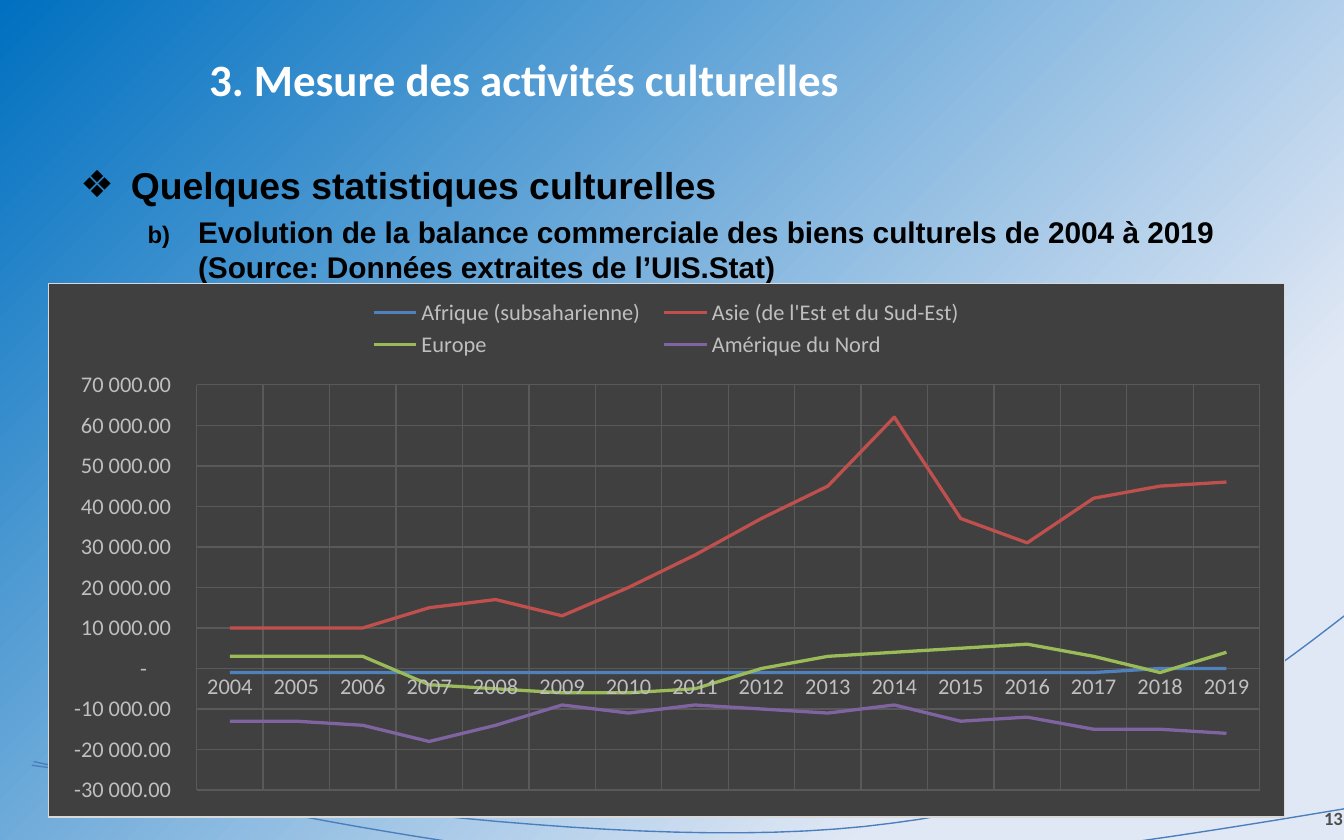
import lxml.etree
import pptx
import pptx.chart.data
import pptx.dml.color
import pptx.enum.chart
import pptx.enum.text
import pptx.oxml
import pptx.oxml.ns
import pptx.util

Pt = pptx.util.Pt
RGB = pptx.dml.color.RGBColor.from_string
qn = pptx.oxml.ns.qn
NS = pptx.oxml.ns.nsdecls("a", "c")
COLORS = {
    "white": "FFFFFF", "black": "000000", "page": "4D4D4D", "curve": "4B7EBC",
    "sky": "E1E8F5", "deep": "0070C0", "panel": "404040", "border": "D9D9D9",
    "grid": "595959", "label": "BFBFBF", "africa": "4F81BD", "asia": "C0504D",
    "europe": "9BBB59", "america": "8064A2",
}

presentation = pptx.Presentation()
presentation.slide_width, presentation.slide_height = Pt(720), Pt(450)
slide = presentation.slides.add_slide(presentation.slide_layouts[6])


def add_text(frame, text, size, color="black", font="Calibri", align="LEFT",
             before=0, left=0, hanging=0, level=0, bullet=()):
    """Write one bold paragraph, in the empty first one when there is one."""
    paragraph = frame.paragraphs[0] if not frame.text else frame.add_paragraph()
    paragraph.alignment = getattr(pptx.enum.text.PP_ALIGN, align)
    paragraph.level = level
    if before:
        paragraph.space_before = Pt(before)
    if bullet:
        properties = paragraph._p.get_or_add_pPr()
        properties.set("marL", str(Pt(left)))
        properties.set("indent", str(Pt(-hanging)))
        for tag, attributes in bullet:
            lxml.etree.SubElement(properties, qn(tag), attributes)
    run = paragraph.add_run()
    run.text = text
    run.font.size, run.font.name, run.font.bold = Pt(size), font, True
    run.font.color.rgb = RGB(COLORS[color])


def set_layout(part, x, y, w, h, inner=False):
    """Place a chart part by fractions of the chart area."""
    for old in part.findall(qn("c:layout")):
        part.remove(old)
    target = '<c:layoutTarget val="inner"/>' if inner else ""
    layout = pptx.oxml.parse_xml(
        f'<c:layout {NS}><c:manualLayout>{target}<c:xMode val="edge"/><c:yMode val="edge"/>'
        f'<c:x val="{x}"/><c:y val="{y}"/><c:w val="{w}"/><c:h val="{h}"/>'
        '</c:manualLayout></c:layout>')
    position = part.find(qn("c:legendPos"))
    part.insert(0 if position is None else part.index(position) + 1, layout)


# Background: glow spreading from the bottom right corner
background = slide.background.fill
background.solid()
background.fore_color.rgb = RGB(COLORS["sky"])
solid = slide.background._cSld.bg.bgPr.find(qn("a:solidFill"))
solid.getparent().replace(solid, pptx.oxml.parse_xml(
    f'<a:gradFill {NS} rotWithShape="1"><a:gsLst>'
    f'<a:gs pos="22000"><a:srgbClr val="{COLORS["sky"]}"><a:alpha val="67000"/></a:srgbClr></a:gs>'
    f'<a:gs pos="100000"><a:srgbClr val="{COLORS["deep"]}"><a:alpha val="87000"/></a:srgbClr></a:gs>'
    '</a:gsLst><a:path path="circle"><a:fillToRect l="100000" t="100000"/></a:path></a:gradFill>'))

# Decorative curves: each is a chain of two cubic arcs
curves = [
    [(17, 410), (188, 433), (359, 457), (478, 441), (598, 426), (668, 371), (738, 316)],
    [(18, 408), (145, 435), (271, 462), (391, 465), (511, 469), (626, 449), (740, 430)],
]
STEPS = 24
for curve in curves:
    points = []
    for start in (0, 3):
        arc = curve[start:start + 4]
        for step in range(STEPS + 1):
            t = step / STEPS
            weights = ((1 - t) ** 3, 3 * t * (1 - t) ** 2, 3 * t * t * (1 - t), t ** 3)
            points.append([Pt(sum(w * p[axis] for w, p in zip(weights, arc))) for axis in (0, 1)])
    builder = slide.shapes.build_freeform(*points[0])
    builder.add_line_segments(points[1:], close=False)
    wave = builder.convert_to_shape()
    wave.shadow.inherit = False
    wave.fill.background()
    wave.line.color.rgb = RGB(COLORS["curve"])
    wave.line.width = Pt(0.75)

# Title, outline and page number
frames = []
for box, anchor in (((105, 12, 615, 60), "MIDDLE"), ((36, 83.5, 648, 348.5), "TOP"),
                    ((655, 426, 71.5, 24), "MIDDLE")):
    frame = slide.shapes.add_textbox(*map(Pt, box)).text_frame
    frame.word_wrap = True
    frame.vertical_anchor = getattr(pptx.enum.text.MSO_ANCHOR, anchor)
    frames.append(frame)
title, outline, page = frames
add_text(title, "3. Mesure des activités culturelles", 24, color="white")
add_text(outline, "Quelques statistiques culturelles", 20, font="Arial", left=27, hanging=27,
         bullet=[("a:buFont", {"typeface": "Arial"}), ("a:buChar", {"char": "❖"})])
add_text(outline, "Evolution de la balance commerciale des biens culturels de 2004 à 2019 "
         "(Source: Données extraites de l’UIS.Stat)", 16, font="Arial", before=3.2,
         left=63, hanging=27, level=1,
         bullet=[("a:buSzPct", {"val": "80000"}), ("a:buFont", {"typeface": "Arial"}),
                 ("a:buAutoNum", {"type": "alphaLcParenR", "startAt": "2"})])
add_text(page, "13", 10, color="page", align="RIGHT")

# Trade balance by region, in thousands
balances = [
    ("Afrique (subsaharienne)", "africa", [-1] * 14 + [0, 0]),
    ("Asie (de l'Est et du Sud-Est)", "asia",
     [10, 10, 10, 15, 17, 13, 20, 28, 37, 45, 62, 37, 31, 42, 45, 46]),
    ("Europe", "europe", [3, 3, 3, -4, -5, -6, -6, -5, 0, 3, 4, 5, 6, 3, -1, 4]),
    ("Amérique du Nord", "america",
     [-13, -13, -14, -18, -14, -9, -11, -9, -10, -11, -9, -13, -12, -15, -15, -16]),
]
data = pptx.chart.data.CategoryChartData()
data.categories = [str(year) for year in range(2004, 2020)]
for region, _, thousands in balances:
    data.add_series(region, [value * 1000 for value in thousands])
chart = slide.shapes.add_chart(pptx.enum.chart.XL_CHART_TYPE.LINE, Pt(25.5), Pt(151.5),
                               Pt(663), Pt(286.5), data).chart
chart.has_title = False
chart.font.size, chart.font.name = Pt(12), "Calibri"
chart.font.color.rgb = RGB(COLORS["label"])
for series, (_, color, _) in zip(chart.plots[0].series, balances):
    series.smooth = False
    series.marker.style = pptx.enum.chart.XL_MARKER_STYLE.NONE
    series.format.line.color.rgb = RGB(COLORS[color])
    series.format.line.width = Pt(1.75)
chart.plots[0].vary_by_categories = False

# Axes
for axis in (chart.category_axis, chart.value_axis):
    axis.major_tick_mark = axis.minor_tick_mark = pptx.enum.chart.XL_TICK_MARK.NONE
    axis.format.line.fill.background()
    axis.has_major_gridlines = True
    axis.major_gridlines.format.line.color.rgb = RGB(COLORS["grid"])
    axis.major_gridlines.format.line.width = Pt(0.75)
    axis.tick_labels.font.size, axis.tick_labels.font.name = Pt(12), "Calibri"
    axis.tick_labels.font.color.rgb = RGB(COLORS["label"])
scale = chart.value_axis
scale.minimum_scale, scale.maximum_scale, scale.major_unit = -30000, 70000, 10000
scale.tick_labels.number_format = (
    r'_-* #\ ##0.00\ _€_-;\-* #\ ##0.00\ _€_-;_-* "-"??\ _€_-')
scale.tick_labels.number_format_is_linked = False

# Legend, plot area and dark panel
chart.has_legend = True
chart.legend.position = pptx.enum.chart.XL_LEGEND_POSITION.TOP
chart.legend.include_in_layout = False
chart.legend.font.size, chart.legend.font.name = Pt(12), "Calibri"
chart.legend.font.color.rgb = RGB(COLORS["label"])
set_layout(chart.legend._element, 0.25, 0.02, 0.5, 0.13)
chart_space = chart._chartSpace
set_layout(chart_space.chart.plotArea, 0.12, 0.19, 0.86, 0.76, inner=True)
chart_space.chart.addnext(pptx.oxml.parse_xml(
    f'<c:spPr {NS}><a:solidFill><a:srgbClr val="{COLORS["panel"]}"/></a:solidFill>'
    f'<a:ln w="{Pt(0.75)}"><a:solidFill><a:srgbClr val="{COLORS["border"]}"/></a:solidFill></a:ln>'
    '</c:spPr>'))

presentation.save("out.pptx")
